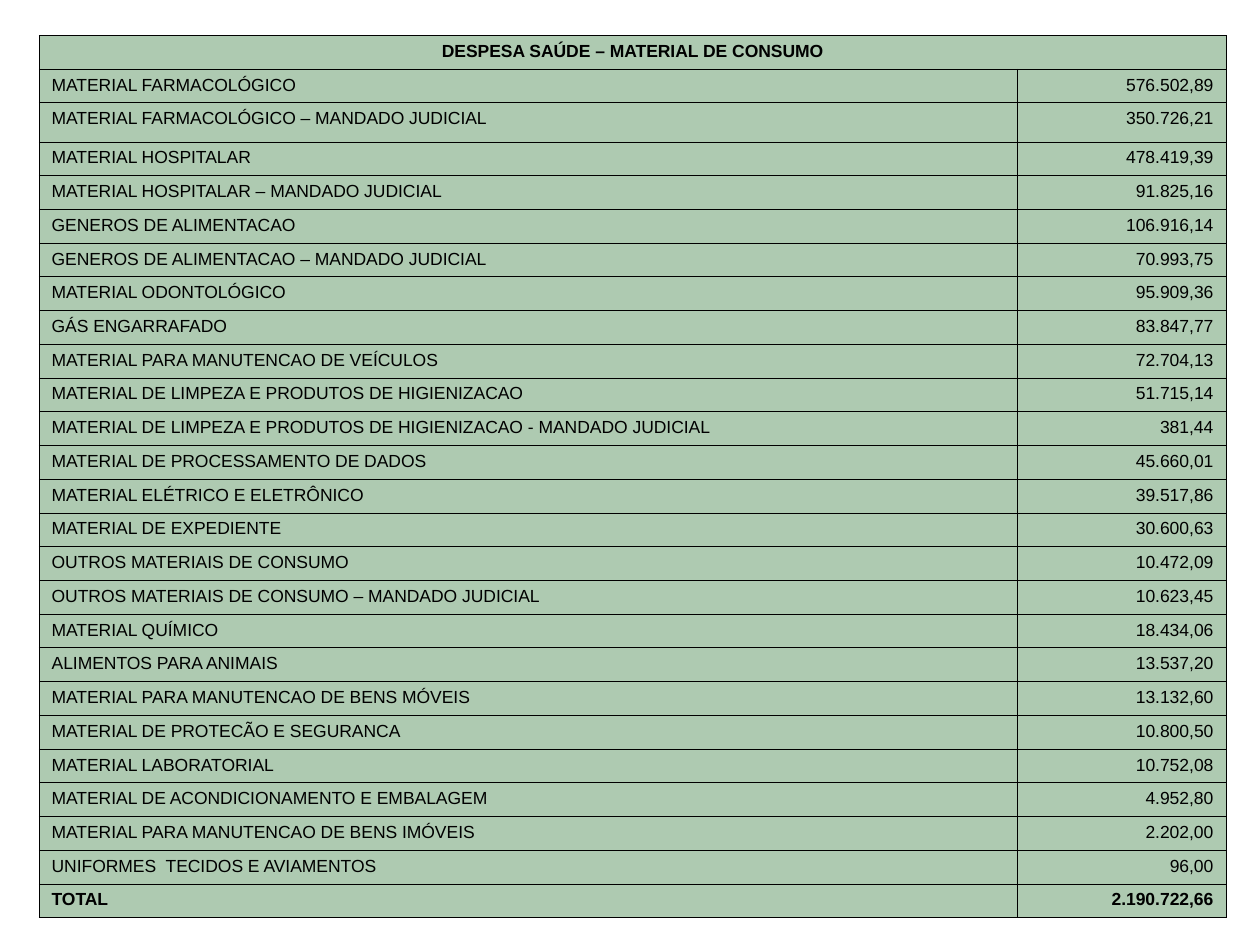
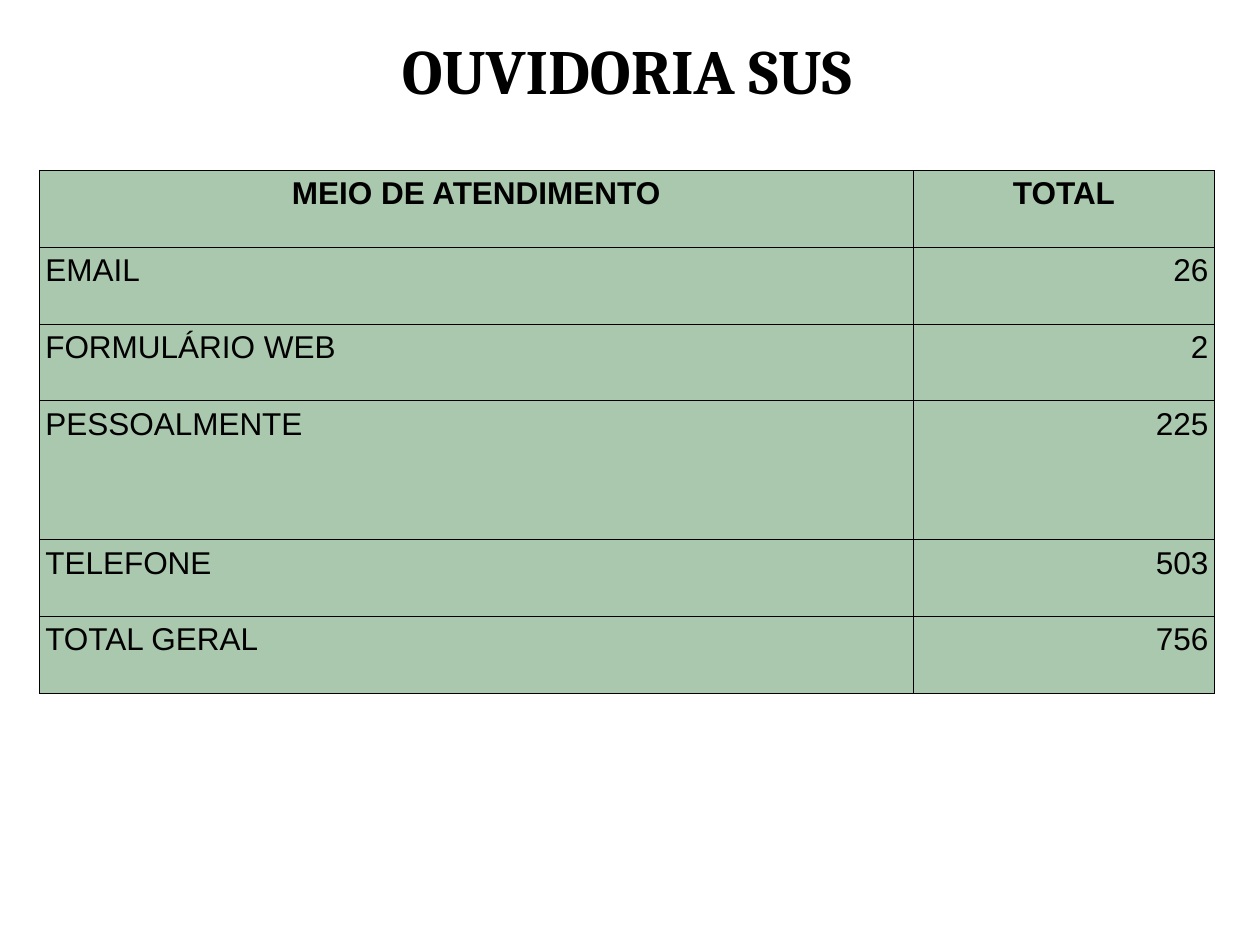
from lxml import etree
from pptx import Presentation
from pptx.dml.color import RGBColor
from pptx.enum.text import MSO_ANCHOR, MSO_AUTO_SIZE, PP_ALIGN
from pptx.oxml.ns import qn
from pptx.util import Inches, Pt

LEFT, CENTER, RIGHT = PP_ALIGN.LEFT, PP_ALIGN.CENTER, PP_ALIGN.RIGHT
MIDDLE = MSO_ANCHOR.MIDDLE
NO_AUTOFIT = MSO_AUTO_SIZE.NONE

# Shared style
BLACK = "000000"
GREEN = "AAC8AD"
TABLE_FONT = "Arial"
TITLE_FONT = "Cambria"
BORDER_WIDTH = Pt(0.34)
TABLE_LEFT = 0.31
BLANK_LAYOUT, TITLE_ONLY_LAYOUT = 6, 5


def format_text(paragraph, font_name, size, bold, alignment):
    paragraph.alignment = alignment
    for run in paragraph.runs:
        run.font.name = font_name
        run.font.size = Pt(size)
        run.font.bold = bold
        run.font.color.rgb = RGBColor.from_string(BLACK)


def add_green_table(slide, top, widths, heights, rows, size, bold_rows, side_margin, opacity):
    """Add a bordered green table with a centred first row and right-aligned values."""
    frame = slide.shapes.add_table(
        len(rows), len(widths), Inches(TABLE_LEFT), Inches(top),
        Inches(sum(widths)), Inches(sum(heights)))
    table = frame.table
    table.first_row = table.horz_banding = False
    for column, width in zip(table.columns, widths):
        column.width = Inches(width)
    for row_index, (values, height) in enumerate(zip(rows, heights)):
        table.rows[row_index].height = Inches(height)
        for column_index, text in enumerate(values):
            cell = table.cell(row_index, column_index)
            cell.margin_left = cell.margin_right = Inches(side_margin)
            cell.margin_top = cell.margin_bottom = Inches(0.05)

            # Cell text
            cell.text_frame.text = text
            if row_index == 0:
                alignment = CENTER
            else:
                alignment = RIGHT if column_index else LEFT
            format_text(cell.text_frame.paragraphs[0], TABLE_FONT, size,
                        row_index in bold_rows, alignment)

            # Borders come before the fill in the cell properties
            properties = cell._tc.get_or_add_tcPr()
            for side in ("lnL", "lnR", "lnT", "lnB"):
                line = etree.SubElement(properties, qn(f"a:{side}"), w=str(BORDER_WIDTH))
                line_fill = etree.SubElement(line, qn("a:solidFill"))
                etree.SubElement(line_fill, qn("a:srgbClr"), val=BLACK)
            cell.fill.solid()
            cell.fill.fore_color.rgb = RGBColor.from_string(GREEN)
            if opacity < 100:
                color = properties.find(qn("a:solidFill")).find(qn("a:srgbClr"))
                etree.SubElement(color, qn("a:alpha"), val=str(opacity * 1000))
    return table


presentation = Presentation()
presentation.slide_width = Inches(10)
presentation.slide_height = Inches(7.5)

# Slide 1: health spending on consumables
expenses = [
    ("DESPESA SAÚDE – MATERIAL DE CONSUMO", ""),
    ("MATERIAL FARMACOLÓGICO", "576.502,89"),
    ("MATERIAL FARMACOLÓGICO – MANDADO JUDICIAL", "350.726,21"),
    ("MATERIAL HOSPITALAR", "478.419,39"),
    ("MATERIAL HOSPITALAR – MANDADO JUDICIAL", "91.825,16"),
    ("GENEROS DE ALIMENTACAO", "106.916,14"),
    ("GENEROS DE ALIMENTACAO – MANDADO JUDICIAL", "70.993,75"),
    ("MATERIAL ODONTOLÓGICO", "95.909,36"),
    ("GÁS ENGARRAFADO", "83.847,77"),
    ("MATERIAL PARA MANUTENCAO DE VEÍCULOS", "72.704,13"),
    ("MATERIAL DE LIMPEZA E PRODUTOS DE HIGIENIZACAO", "51.715,14"),
    ("MATERIAL DE LIMPEZA E PRODUTOS DE HIGIENIZACAO - MANDADO JUDICIAL", "381,44"),
    ("MATERIAL DE PROCESSAMENTO DE DADOS", "45.660,01"),
    ("MATERIAL ELÉTRICO E ELETRÔNICO", "39.517,86"),
    ("MATERIAL DE EXPEDIENTE", "30.600,63"),
    ("OUTROS MATERIAIS DE CONSUMO", "10.472,09"),
    ("OUTROS MATERIAIS DE CONSUMO – MANDADO JUDICIAL", "10.623,45"),
    ("MATERIAL QUÍMICO", "18.434,06"),
    ("ALIMENTOS PARA ANIMAIS", "13.537,20"),
    ("MATERIAL PARA MANUTENCAO DE BENS MÓVEIS", "13.132,60"),
    ("MATERIAL DE PROTECÃO E SEGURANCA", "10.800,50"),
    ("MATERIAL LABORATORIAL", "10.752,08"),
    ("MATERIAL DE ACONDICIONAMENTO E EMBALAGEM", "4.952,80"),
    ("MATERIAL PARA MANUTENCAO DE BENS IMÓVEIS", "2.202,00"),
    ("UNIFORMES  TECIDOS E AVIAMENTOS", "96,00"),
    ("TOTAL", "2.190.722,66"),
]
tall_row, tall_height, table_height = 2, 0.31, 7.01
expense_heights = [(table_height - tall_height) / (len(expenses) - 1)] * len(expenses)
expense_heights[tall_row] = tall_height

slide = presentation.slides.add_slide(presentation.slide_layouts[BLANK_LAYOUT])
expense_table = add_green_table(
    slide, 0.28, [7.76, 1.66], expense_heights, expenses, size=10,
    bold_rows=(0, len(expenses) - 1), side_margin=0.1, opacity=95)
expense_table.cell(0, 0).merge(expense_table.cell(0, 1))

# Slide 2: ombudsman contacts
contacts = [
    ("MEIO DE ATENDIMENTO", "TOTAL"),
    ("EMAIL", "26"),
    ("FORMULÁRIO WEB", "2"),
    ("PESSOALMENTE", "225"),
    ("TELEFONE", "503"),
    ("TOTAL GERAL", "756"),
]
contact_heights = [1.1 if name == "PESSOALMENTE" else 0.61 for name, total in contacts]

slide = presentation.slides.add_slide(presentation.slide_layouts[TITLE_ONLY_LAYOUT])
title = slide.shapes.title
title.left, title.top = Inches(TABLE_LEFT), Inches(0.2)
title.width, title.height = Inches(9.33), Inches(0.7)
title.text_frame.text = "OUVIDORIA SUS"
title.text_frame.auto_size = NO_AUTOFIT
title.text_frame.vertical_anchor = MIDDLE
format_text(title.text_frame.paragraphs[0], TITLE_FONT, 36, True, CENTER)

add_green_table(
    slide, 1.35, [6.94, 2.39], contact_heights, contacts, size=18,
    bold_rows=(0,), side_margin=0.05, opacity=100)

presentation.save("out.pptx")
